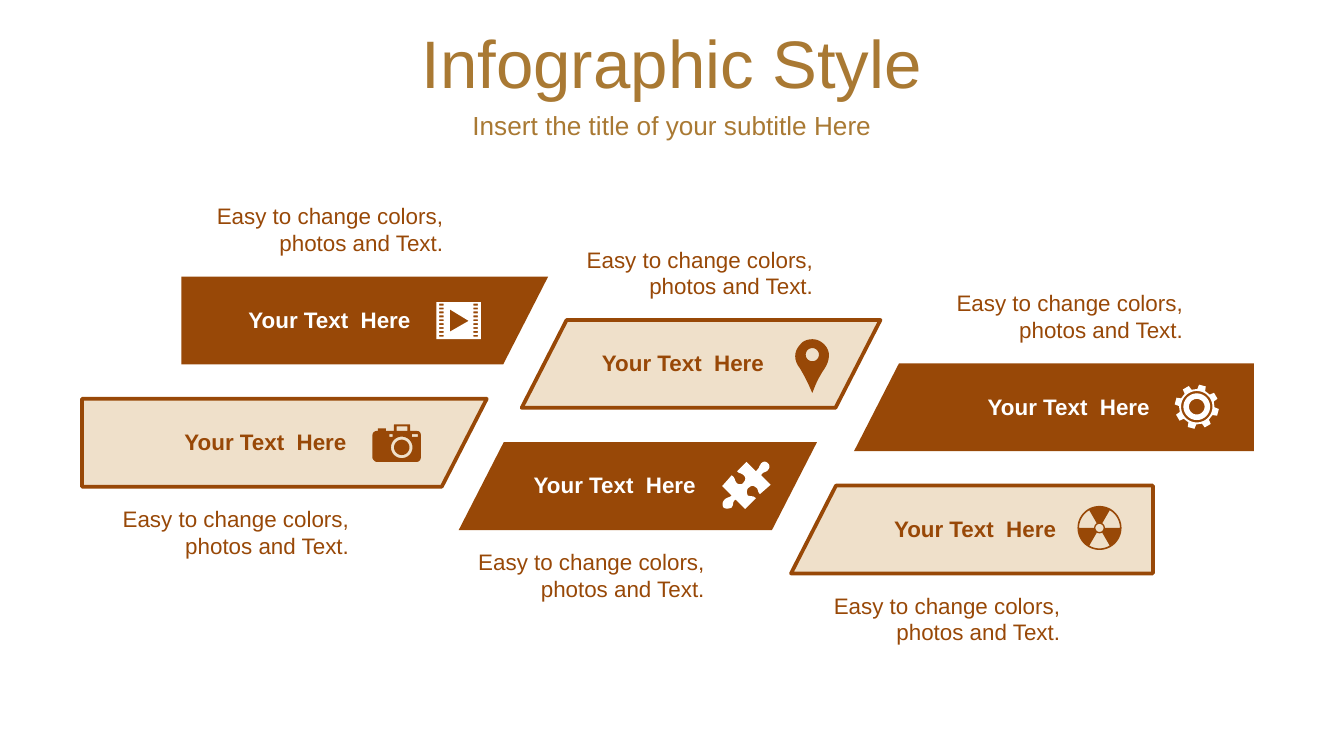
import math
from dataclasses import dataclass

import pptx
import pptx.dml.color
import pptx.enum.text
import pptx.util

Cm = pptx.util.Cm
Align = pptx.enum.text.PP_ALIGN
RGBColor = pptx.dml.color.RGBColor

BROWN = RGBColor(0x98, 0x48, 0x07)
CREAM = RGBColor(0xEF, 0xE0, 0xCA)
GOLD = RGBColor(0xA9, 0x79, 0x33)
WHITE = RGBColor(0xFF, 0xFF, 0xFF)

Contour = list[tuple[float, float]]

ICON_UNIT = 0.0254  # cm per icon unit
BAND_HEIGHT = 1.66
SLANT = 0.85
ROW_STEP = 0.82


def rect(x: float, y: float, width: float, height: float) -> Contour:
    return [(x, y), (x + width, y), (x + width, y + height), (x, y + height)]


def arc(x: float, y: float, radius: float, start: float = 0, end: float = 360) -> Contour:
    """Points about 6 degrees apart, from start to end."""
    steps = max(2, round(abs(end - start) / 6))
    angles = [math.radians(start + (end - start) * i / steps) for i in range(steps + 1)]
    return [(x + radius * math.cos(a), y + radius * math.sin(a)) for a in angles]


def curve(start: tuple, *segments: tuple) -> Contour:
    """Flatten lines (2 numbers) and cubic curves (6 numbers) to points."""
    points = [start]
    for segment in segments:
        if len(segment) == 2:
            points.append(segment)
            continue
        x0, y0 = points[-1]
        x1, y1, x2, y2, x3, y3 = segment
        for t in (i / 8 for i in range(1, 9)):
            a, b, c, d = (1 - t) ** 3, 3 * t * (1 - t) ** 2, 3 * t * t * (1 - t), t ** 3
            points.append((a * x0 + b * x1 + c * x2 + d * x3,
                           a * y0 + b * y1 + c * y2 + d * y3))
    return points


def sector(start: float) -> Contour:
    return arc(16.5, 16.5, 15.2, start, start + 60) + arc(16.5, 16.5, 4, start + 60, start)


def gear_rim() -> Contour:
    """Eight teeth around the hub."""
    offsets = ((-13, 13.2), (-9, 16.5), (9, 16.5), (13, 13.2))
    return [(16.5 + r * math.cos(math.radians(a)), 16.5 + r * math.sin(math.radians(a)))
            for tooth in range(8) for a, r in ((45 * tooth - 75 + o, r) for o, r in offsets)]


FILM = [rect(0, 0, 33, 27.5), [(10, 5.5), (10, 22), (24, 14)]]
FILM += [rect(x, 1.2 + 2.9 * row, 3.4, 1.4) for row in range(9) for x in (2, 27.5)]

CAMERA = [
    curve((17.5, 0), (27, 0), (28, 0, 28, 0, 28, 1), (28, 5), (33, 5), (35, 5, 36, 6, 36, 8),
          (36, 25), (36, 26, 35, 28, 33, 28), (3, 28), (2, 28, 0, 26, 0, 25),
          (0, 8), (0, 6, 2, 5, 3, 5), (4, 5), (4, 3), (10, 3), (10, 5), (16, 5),
          (16, 1), (16, 0, 16, 0, 17.5, 0)),
    rect(18, 1.5, 8, 3.5), rect(12.7, 7.3, 2.4, 2), rect(29.3, 7.3, 4.5, 2),
    arc(21.8, 17.2, 8), arc(21.8, 17.2, 5.7),
]
PIN = [
    curve((13, 0), (16, 0, 19, 1, 22, 4), (27, 9, 26, 16, 22, 22), (18, 28, 16, 32, 13, 40),
          (9, 31, 8, 29, 4, 22), (-1, 16, -1, 9, 4, 4), (6, 1, 10, 0, 13, 0)),
    arc(13, 11.5, 4.9),
]
PUZZLE = [curve(
    (34, 2), (35, 3, 36, 5, 34, 7), (33, 9, 30, 8, 29, 11), (36, 18), (28, 25),
    (26, 23, 27, 21, 25, 20), (23, 18, 21, 19, 20, 20), (18, 21, 18, 24, 19, 26),
    (22, 27, 23, 26, 25, 28), (17, 36), (10, 29), (7, 31, 9, 32, 7, 35), (5, 36, 2, 36, 1, 35),
    (0, 34, 0, 31, 1, 30), (3, 27, 5, 28, 7, 26), (0, 19), (7, 11), (10, 13, 9, 15, 11, 17),
    (13, 18, 15, 18, 16, 16), (17, 15, 18, 13, 16, 11), (14, 9, 13, 10, 11, 8), (18, 1), (25, 8),
    (28, 5, 27, 5, 29, 2), (31, 0, 33, 1, 34, 2))]
GEAR = [gear_rim()] + [arc(16.5, 16.5, radius) for radius in (11.7, 9.9, 5.8)]
RADIATION = [arc(16.5, 16.5, 16.4), arc(16.5, 16.5, 3)] + [sector(a) for a in (60, 180, 300)]


@dataclass(frozen=True)
class Icon:
    contours: list[Contour]
    left: float
    top: float
    rotation: float = 0
    pivot: tuple[float, float] = (0, 0)


@dataclass(frozen=True)
class Step:
    column: int
    upper: bool
    left: float
    right: float
    filled: bool
    label_left: float
    icon: Icon

    @property
    def top(self) -> float:
        return (5.23 if self.upper else 7.54) + ROW_STEP * self.column

    @property
    def ink(self) -> RGBColor:
        return WHITE if self.filled else BROWN


STEPS = [
    Step(0, True, 3.43, 10.36, True, 4.39, Icon(FILM, 8.25, 5.71)),
    Step(0, False, 1.55, 9.2, False, 3.18, Icon(CAMERA, 7.04, 8.02)),
    Step(1, True, 9.86, 16.64, False, 11.07, Icon(PIN, 15.01, 6.43, 135, (13, 17))),
    Step(1, False, 8.67, 15.44, True, 9.78, Icon(PUZZLE, 13.64, 8.71, 45, (17.5, 18))),
    Step(2, True, 16.14, 23.7, True, 18.36, Icon(GEAR, 22.2, 7.27)),
    Step(2, False, 14.95, 21.79, False, 16.59, Icon(RADIATION, 20.36, 9.56)),
]


def add_outline(slide, contours: list[Contour], fill: RGBColor, line: RGBColor | None = None):
    """Draw contours given in cm; inner contours become holes."""
    first, *rest = [[(Cm(x), Cm(y)) for x, y in contour] for contour in contours]
    builder = slide.shapes.build_freeform(*first[0])
    builder.add_line_segments(first[1:])
    for contour in rest:
        builder.move_to(*contour[0])
        builder.add_line_segments(contour[1:])
    outline = builder.convert_to_shape()
    outline.shadow.inherit = False
    outline.fill.solid()
    outline.fill.fore_color.rgb = fill
    if line is None:
        outline.line.fill.background()
    else:
        outline.line.color.rgb = line
        outline.line.width = pptx.util.Pt(2)
    return outline


def add_band(slide, step: Step) -> None:
    lean_left = SLANT if step.column > 0 else 0
    lean_right = SLANT if step.column < 2 else 0
    bottom = step.top + BAND_HEIGHT
    corners = [(step.left + lean_left, step.top), (step.right, step.top),
               (step.right - lean_right, bottom), (step.left, bottom)]
    add_outline(slide, [corners], BROWN if step.filled else CREAM,
                None if step.filled else BROWN)


def add_icon(slide, icon: Icon, color: RGBColor) -> None:
    """Turn the points back about the pivot, then rotate the shape upright."""
    px, py = icon.pivot
    cos, sin = (f(math.radians(-icon.rotation)) for f in (math.cos, math.sin))
    placed = [[(icon.left + ICON_UNIT * (px + (x - px) * cos - (y - py) * sin),
                icon.top + ICON_UNIT * (py + (x - px) * sin + (y - py) * cos))
               for x, y in contour] for contour in icon.contours]
    add_outline(slide, placed, color).rotation = icon.rotation


def add_text(slide, text: str, box: tuple, size: float, color: RGBColor,
             align: Align = Align.CENTER, bold: bool = False, grow: bool = True) -> None:
    frame = slide.shapes.add_textbox(*map(Cm, box)).text_frame
    auto, anchor = pptx.enum.text.MSO_AUTO_SIZE, pptx.enum.text.MSO_ANCHOR
    frame_format = {"word_wrap": True,
                    "auto_size": auto.SHAPE_TO_FIT_TEXT if grow else auto.NONE,
                    "vertical_anchor": anchor.TOP if grow else anchor.MIDDLE}
    for name, value in frame_format.items():
        setattr(frame, name, value)
    paragraph = frame.paragraphs[0]
    paragraph.alignment = align
    run = paragraph.add_run()
    run.text = text
    font_format = {"name": "Arial", "size": pptx.util.Pt(size), "bold": bold}
    for name, value in font_format.items():
        setattr(run.font, name, value)
    run.font.color.rgb = color


def main() -> None:
    deck = pptx.Presentation()
    deck.slide_width, deck.slide_height = Cm(25.4), Cm(14.29)
    slide = deck.slides.add_slide(deck.slide_layouts[6])

    add_text(slide, "Infographic Style", (0, 0.36, 25.4, 1.6), 36, GOLD, grow=False)
    add_text(slide, "Insert the title of your subtitle Here", (0, 1.96, 25.4, 0.79), 14, GOLD,
             grow=False)
    for step in STEPS:
        add_band(slide, step)
    for step in STEPS:
        add_icon(slide, step.icon, step.ink)
        add_text(slide, "Your Text  Here", (step.label_left, step.top + 0.43, 3.68, 0.76), 12,
                 step.ink, bold=True)
        caption_left = 3.35 + 6.99 * step.column if step.upper else 1.57 + 6.72 * step.column
        caption_top = step.top + (-1.53 if step.upper else 1.88)
        add_text(slide, "Easy to change colors, photos and Text.",
                 (caption_left, caption_top, 5.28, 1.27), 12, BROWN, Align.RIGHT)
    deck.save("out.pptx")


if __name__ == "__main__":
    main()
